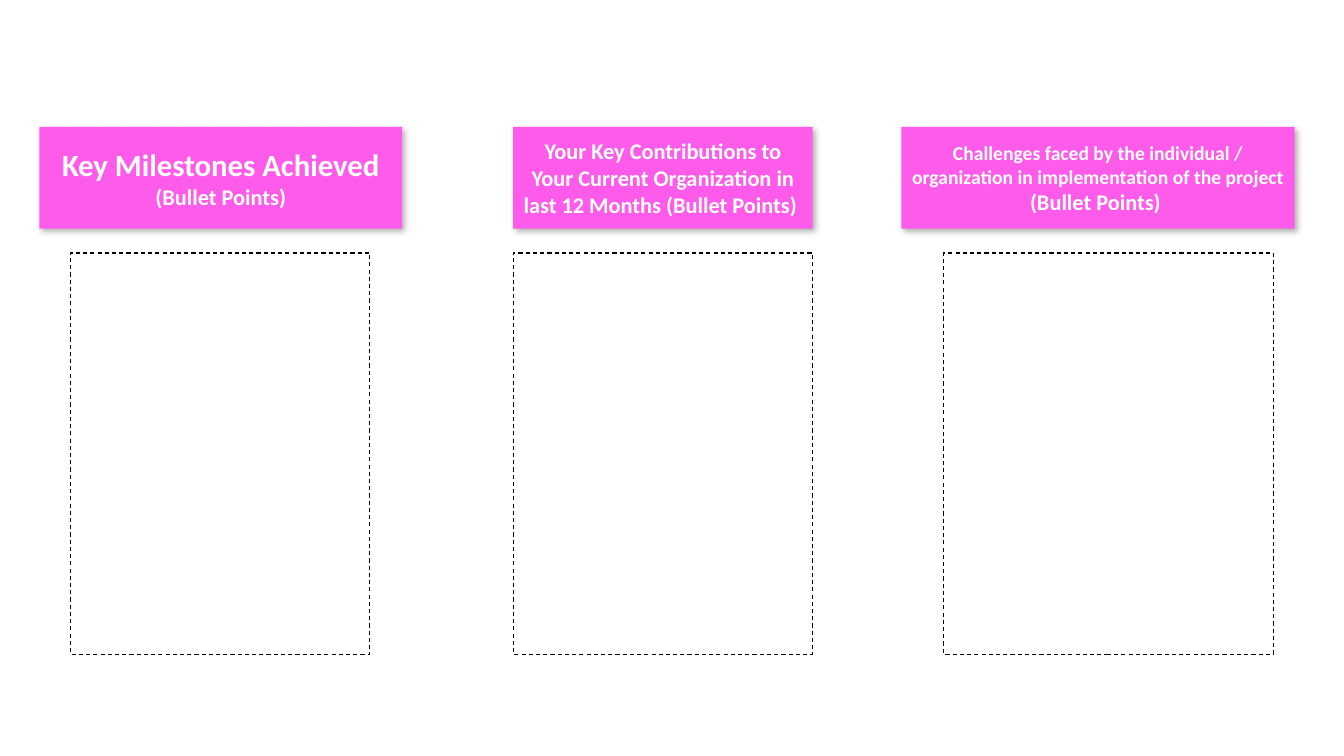
from lxml import etree
from pptx import Presentation
from pptx import util as u
from pptx.dml.color import RGBColor
from pptx.enum import dml, shapes, text
from pptx.oxml.ns import qn

COLORS = {"header": "FF5BEB", "text": "FFFFFF", "line": "000000", "shadow": "000000"}
HEADER_TOP, HEADER_H = 1.26, 1.01
PANEL_TOP, PANEL_H = 2.51, 3.98

# header (left, width), panel (left, width), lines of (text, size)
COLUMNS = [
    ((0.39, 3.6), (0.7, 2.97),
     [("Key Milestones Achieved", 22), ("(Bullet Points)", 16)]),
    ((5.09, 2.97), (5.09, 2.97),
     [("Your Key Contributions to Your Current Organization in "
       "last 12 Months (Bullet Points) ", 16)]),
    ((8.94, 3.9), (9.36, 3.27),
     [("Challenges faced by the individual / organization in "
       "implementation of the project", 14), ("(Bullet Points) ", 16)]),
]


def color(name):
    return RGBColor.from_string(COLORS[name])


def add_rect(s, left, top, width, height):
    sp = s.shapes.add_shape(shapes.MSO_SHAPE.RECTANGLE,
                            *map(u.Inches, (left, top, width, height)))
    sp.shadow.inherit = False
    return sp


def add_shadow(sp):
    """Give the shape a soft shadow towards the lower right."""
    effects = sp._element.spPr.find(qn("a:effectLst"))
    shadow = etree.SubElement(effects, qn("a:outerShdw"), blurRad=str(u.Pt(4.5)),
                              dist=str(u.Pt(2.6)), dir=str(53 * 60000),
                              algn="ctr", rotWithShape="0")
    clr = etree.SubElement(shadow, qn("a:srgbClr"), val=COLORS["shadow"])
    etree.SubElement(clr, qn("a:alpha"), val="30000")


def add_header(s, left, width, lines):
    sp = add_rect(s, left, HEADER_TOP, width, HEADER_H)
    sp.fill.solid()
    sp.fill.fore_color.rgb = color("header")
    sp.line.fill.background()
    add_shadow(sp)
    tf = sp.text_frame
    tf.word_wrap = True
    tf.vertical_anchor = text.MSO_ANCHOR.MIDDLE
    for i, (words, size) in enumerate(lines):
        p = tf.add_paragraph() if i else tf.paragraphs[0]
        p.text = words
        p.alignment = text.PP_ALIGN.CENTER
        p.font.name = "Calibri"
        p.font.size = u.Pt(size)
        p.font.bold = True
        p.font.color.rgb = color("text")


def add_panel(s, left, width):
    sp = add_rect(s, left, PANEL_TOP, width, PANEL_H)
    sp.fill.background()
    sp.line.color.rgb = color("line")
    sp.line.width = u.Pt(0.75)
    sp.line.dash_style = dml.MSO_LINE.DASH


def main():
    prs = Presentation()
    prs.slide_width, prs.slide_height = u.Inches(13.33), u.Inches(7.5)
    s = prs.slides.add_slide(prs.slide_layouts[6])
    for header, panel, lines in COLUMNS:
        add_header(s, *header, lines)
        add_panel(s, *panel)
    prs.save("out.pptx")


if __name__ == "__main__":
    main()
